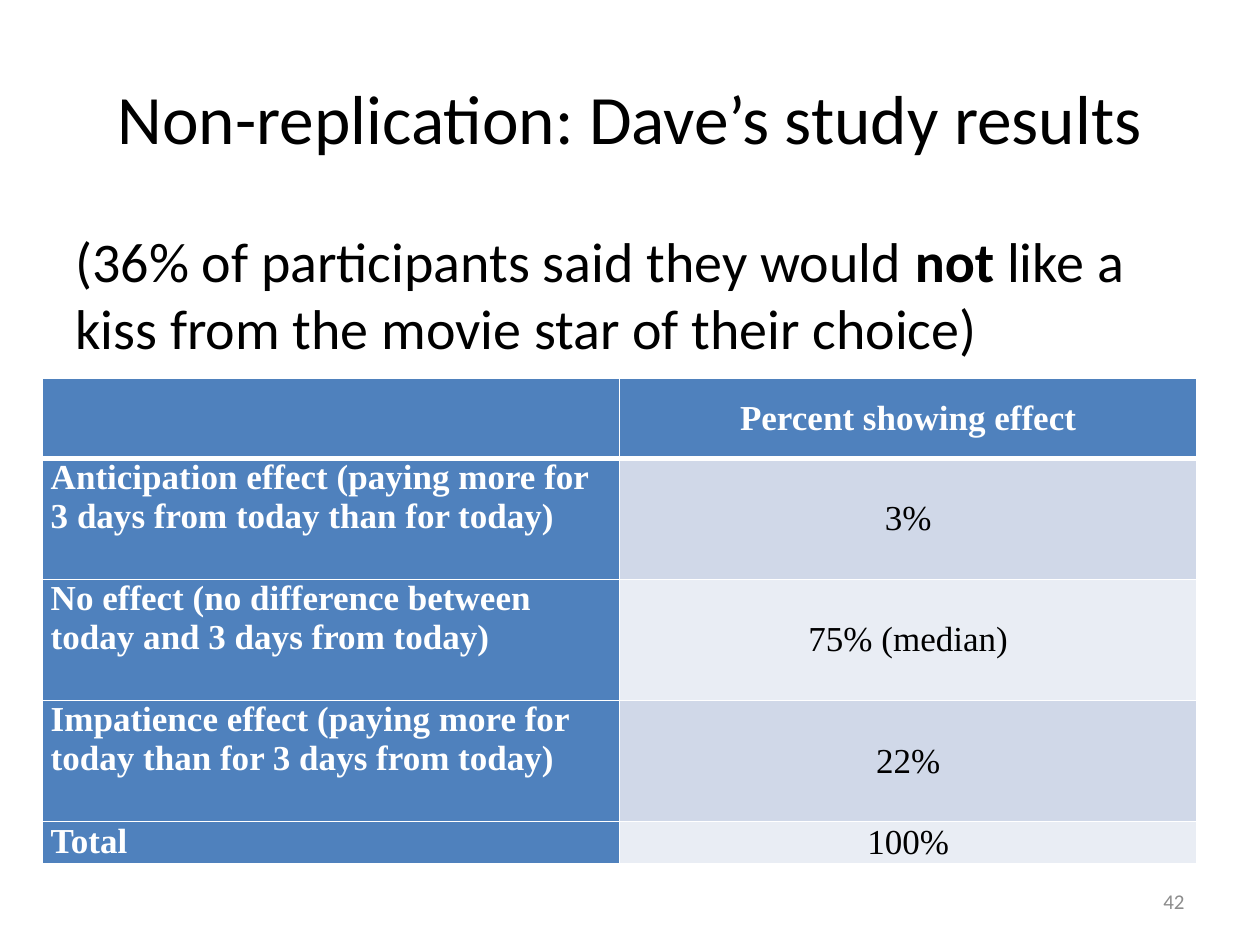
from lxml.etree import SubElement
from pptx import Presentation
from pptx.dml.color import RGBColor
from pptx.enum.text import MSO_ANCHOR, PP_ALIGN
from pptx.oxml.ns import qn
from pptx.util import Pt

# Content
TITLE = "Non-replication: Dave’s study results"
STATEMENT = [
    ("(36% of participants said they would ", False),
    ("not", True),
    (" like a kiss from the movie star of their choice)", False),
]
PAGE_NUMBER = "42"
RESULTS = [
    ("", "Percent showing effect"),
    ("Anticipation effect (paying more for 3 days from today than for today)", "3%"),
    ("No effect (no difference between today and 3 days from today)", "75% (median)"),
    ("Impatience effect (paying more for today than for 3 days from today)", "22%"),
    ("Total", "100%"),
]

# Layout in points: left, top, width, height
TITLE_BOX = (36, 21.6, 648, 90)
STATEMENT_BOX = (36, 126, 648, 356.4)
NUMBER_BOX = (516, 500.4, 168, 28.8)
TABLE_LEFT, TABLE_TOP = 24, 216
COLUMN_WIDTH = 330
ROW_HEIGHTS = [46, 69.2, 69.2, 69.2, 23]

THEME = {
    "body_font": "Calibri", "table_font": "Times New Roman",
    "title_size": 39.6, "statement_size": 32, "table_size": 20, "number_size": 12,
    "text": "000000", "muted": "8C8C8C", "light": "FFFFFF",
    "header": "4F81BD", "bands": ("D0D8E8", "E9EDF4"),
}


def style_font(font, name, size, color, bold=False):
    font.name = name
    font.size = Pt(size)
    font.bold = bold
    font.color.rgb = RGBColor.from_string(color)


def add_text(slide, box, runs, size, color, align, anchor):
    text_box = slide.shapes.add_textbox(*(Pt(value) for value in box))
    text_frame = text_box.text_frame
    text_frame.word_wrap = True
    text_frame.vertical_anchor = anchor
    paragraph = text_frame.paragraphs[0]
    paragraph.alignment = align
    for text, bold in runs:
        run = paragraph.add_run()
        run.text = text
        style_font(run.font, THEME["body_font"], size, color, bold)


def set_borders(cell, widths):
    properties = cell._tc.get_or_add_tcPr()
    for index, (side, width) in enumerate(widths.items()):
        line = SubElement(properties, qn(f"a:ln{side}"), w=str(Pt(width)))
        fill = SubElement(line, qn("a:solidFill"))
        SubElement(fill, qn("a:srgbClr"), val=THEME["light"])
        # Border lines come before the fill in the cell properties
        properties.insert(index, line)


def fill_cell(cell, text, row, column):
    is_header = row == 0 or column == 0
    is_label = column == 0 and row > 0
    cell.fill.solid()
    color = THEME["header"] if is_header else THEME["bands"][(row - 1) % 2]
    cell.fill.fore_color.rgb = RGBColor.from_string(color)
    cell.margin_left = cell.margin_right = Pt(5)
    cell.margin_top = cell.margin_bottom = 0
    cell.vertical_anchor = MSO_ANCHOR.TOP if is_label else MSO_ANCHOR.MIDDLE
    cell.text_frame.text = text
    paragraph = cell.text_frame.paragraphs[0]
    paragraph.alignment = PP_ALIGN.LEFT if is_label else PP_ALIGN.CENTER
    style_font(paragraph.font, THEME["table_font"], THEME["table_size"],
               THEME["light"] if is_header else THEME["text"], is_header)
    for run in paragraph.runs:
        style_font(run.font, THEME["table_font"], THEME["table_size"],
                   THEME["light"] if is_header else THEME["text"], is_header)
    set_borders(cell, {"L": 1, "R": 1, "T": 3 if row == 1 else 1, "B": 3 if row == 0 else 1})


def add_results_table(slide):
    columns = len(RESULTS[0])
    table = slide.shapes.add_table(
        len(RESULTS), columns, Pt(TABLE_LEFT), Pt(TABLE_TOP),
        Pt(COLUMN_WIDTH * columns), Pt(sum(ROW_HEIGHTS))).table
    for column in table.columns:
        column.width = Pt(COLUMN_WIDTH)
    for row, (height, texts) in enumerate(zip(ROW_HEIGHTS, RESULTS)):
        table.rows[row].height = Pt(height)
        for column, text in enumerate(texts):
            fill_cell(table.cell(row, column), text, row, column)


def main():
    presentation = Presentation()
    presentation.slide_width, presentation.slide_height = Pt(720), Pt(540)
    slide = presentation.slides.add_slide(presentation.slide_layouts[6])

    # Title, statement and page number
    add_text(slide, TITLE_BOX, [(TITLE, False)], THEME["title_size"], THEME["text"],
             PP_ALIGN.CENTER, MSO_ANCHOR.MIDDLE)
    add_text(slide, STATEMENT_BOX, STATEMENT, THEME["statement_size"], THEME["text"],
             PP_ALIGN.LEFT, MSO_ANCHOR.TOP)
    add_text(slide, NUMBER_BOX, [(PAGE_NUMBER, False)], THEME["number_size"],
             THEME["muted"], PP_ALIGN.RIGHT, MSO_ANCHOR.MIDDLE)

    # Results table
    add_results_table(slide)
    presentation.save("out.pptx")


if __name__ == "__main__":
    main()
